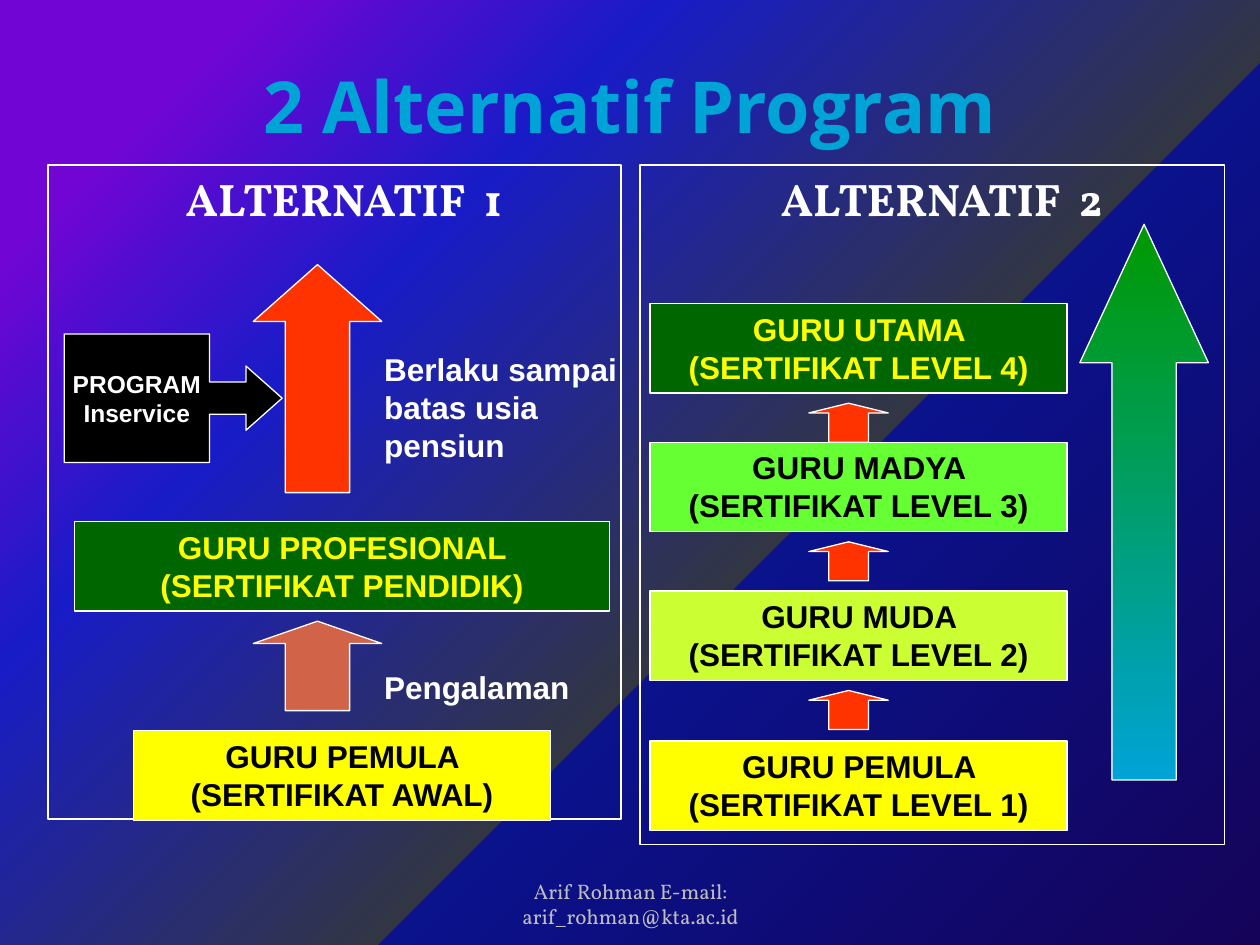
from lxml import etree
from pptx import Presentation
from pptx.dml.color import RGBColor
from pptx.enum.shapes import MSO_SHAPE
from pptx.enum.text import MSO_ANCHOR, PP_ALIGN
from pptx.oxml import parse_xml
from pptx.util import Inches, Pt

UP, BOX = MSO_SHAPE.UP_ARROW, MSO_SHAPE.RECTANGLE
CALL = MSO_SHAPE.RIGHT_ARROW_CALLOUT
MID, LOW, TOP = MSO_ANCHOR.MIDDLE, MSO_ANCHOR.BOTTOM, MSO_ANCHOR.TOP
LEFT, CENTER = PP_ALIGN.LEFT, PP_ALIGN.CENTER
NS = "http://schemas.openxmlformats.org/drawingml/2006/main"
WHITE, BLACK, RED = "FFFFFF", "000000", "FF3300"
YELLOW, GREEN, CYAN = "FFFF00", "006600", "00A3D6"
ROW = 0.71  # height of a level box
STOPS = [(0, "150359"), (40, "0A128C"), (40, "323643"),
         (70, "181CC7"), (88, "7005D4")]
LEVELS = [
    (5.88, "GURU PEMULA (SERTIFIKAT LEVEL 1)", YELLOW, BLACK),
    (4.69, "GURU MUDA (SERTIFIKAT LEVEL 2)", "CCFF33", BLACK),
    (3.51, "GURU MADYA (SERTIFIKAT LEVEL 3)", "66FF33", BLACK),
    (2.41, "GURU UTAMA (SERTIFIKAT LEVEL 4)", GREEN, YELLOW),
]


def rgb(code):
    return RGBColor.from_string(code)


def paint_back(slide):
    """Radial gradient that starts in the lower right corner."""
    slide.background.fill.solid()
    solid = slide.background._cSld.bg.bgPr[0]
    stops = "".join(f'<a:gs pos="{p * 1000}"><a:srgbClr val="{c}"/></a:gs>'
                    for p, c in STOPS)
    grad = parse_xml(
        f'<a:gradFill xmlns:a="{NS}" rotWithShape="1"><a:gsLst>{stops}</a:gsLst>'
        '<a:path path="circle"><a:fillToRect l="100000" t="100000"/></a:path>'
        '<a:tileRect r="-100000" b="-100000"/></a:gradFill>')
    solid.getparent().replace(solid, grad)


def write(shape, text, size, color, font="Arial", bold=True,
          align=CENTER, anchor=TOP, wrap=True):
    frame = shape.text_frame
    frame.text = text
    frame.word_wrap = wrap
    frame.vertical_anchor = anchor
    for para in frame.paragraphs:
        para.alignment = align
        for run in para.runs:
            run.font.size = Pt(size)
            run.font.name = font
            run.font.bold = bold
            run.font.color.rgb = rgb(color)


def add_form(slide, kind, at, fill=None, adj=()):
    shape = slide.shapes.add_shape(kind, *map(Inches, at))
    shape.shadow.inherit = False
    shape.line.color.rgb = rgb(WHITE)
    shape.line.width = Pt(0.75)
    if fill:
        shape.fill.solid()
        shape.fill.fore_color.rgb = rgb(fill)
    else:
        shape.fill.background()
    for i, value in enumerate(adj):
        shape.adjustments[i] = value
    return shape


def add_text(slide, at, text, size, color, **look):
    write(slide.shapes.add_textbox(*map(Inches, at)), text, size, color, **look)


def add_panel(slide, at, text):
    panel = add_form(slide, BOX, at)
    write(panel, text, 26, WHITE, font="Vollkorn")
    panel.text_frame.margin_left = Inches(0.25)


def add_level(slide, x, y, wide, text, fill, color):
    write(add_form(slide, BOX, (x, y, wide, ROW), fill), text, 18, color)


def add_rise(slide):
    """Tall arrow that fades from green to cyan."""
    arrow = add_form(slide, UP, (8.57, 1.78, 1.02, 4.41), adj=(0.5, 1.077))
    arrow.fill.gradient()
    arrow.fill.gradient_angle = 270
    for stop, color in zip(arrow.fill.gradient_stops, ("009900", CYAN)):
        stop.color.rgb = rgb(color)


def add_first(slide):
    add_level(slide, 1.06, 5.8, 3.31, "GURU PEMULA (SERTIFIKAT AWAL)",
              YELLOW, BLACK)
    add_level(slide, 0.59, 4.14, 4.25,
              "GURU PROFESIONAL (SERTIFIKAT PENDIDIK)", GREEN, YELLOW)
    add_form(slide, UP, (2.01, 4.93, 1.02, ROW), "D16349", (0.5, 0.25))
    add_form(slide, UP, (2.01, 2.1, 1.02, 1.81), RED, (0.5, 0.442))
    add_text(slide, (2.95, 5.25, 1.67, 0.4), "Pengalaman", 18, WHITE,
             align=LEFT, wrap=False)
    add_text(slide, (2.95, 2.73, 2.05, 1),
             "Berlaku sampai\nbatas usia\npensiun", 18, WHITE,
             align=LEFT, wrap=False)
    call = add_form(slide, CALL, (0.51, 2.65, 1.73, 1.02), BLACK,
                    (0.25, 0.25, 0.282, 0.667))
    write(call, "PROGRAM\nInservice", 14, WHITE, anchor=MID, wrap=False)


def add_second(slide):
    for y, text, fill, color in LEVELS:
        add_level(slide, 5.16, y, 3.31, text, fill, color)
    for y in (5.48, 4.3, 3.2):
        add_form(slide, UP, (6.42, y, 0.63, 0.31), RED, (0.5, 0.25))


def main():
    deck = Presentation()
    deck.slide_width, deck.slide_height = Inches(10), Inches(7.5)
    slide = deck.slides.add_slide(deck.slide_layouts[6])
    paint_back(slide)
    add_rise(slide)
    add_text(slide, (0.75, 0.42, 8.5, 0.83), "2 Alternatif Program", 41, CYAN,
             font="Open Sans", anchor=MID)
    add_panel(slide, (0.38, 1.31, 4.55, 5.19), "ALTERNATIF  1")
    add_panel(slide, (5.08, 1.31, 4.64, 5.39), "ALTERNATIF  2")
    add_first(slide)
    add_second(slide)
    add_text(slide, (3.42, 7.02, 3.17, 0.4),
             "Arif Rohman E-mail: arif_rohman@kta.ac.id", 12, "BDBDBD",
             font="Vollkorn", bold=False, anchor=LOW)
    deck.save("out.pptx")


if __name__ == "__main__":
    main()
